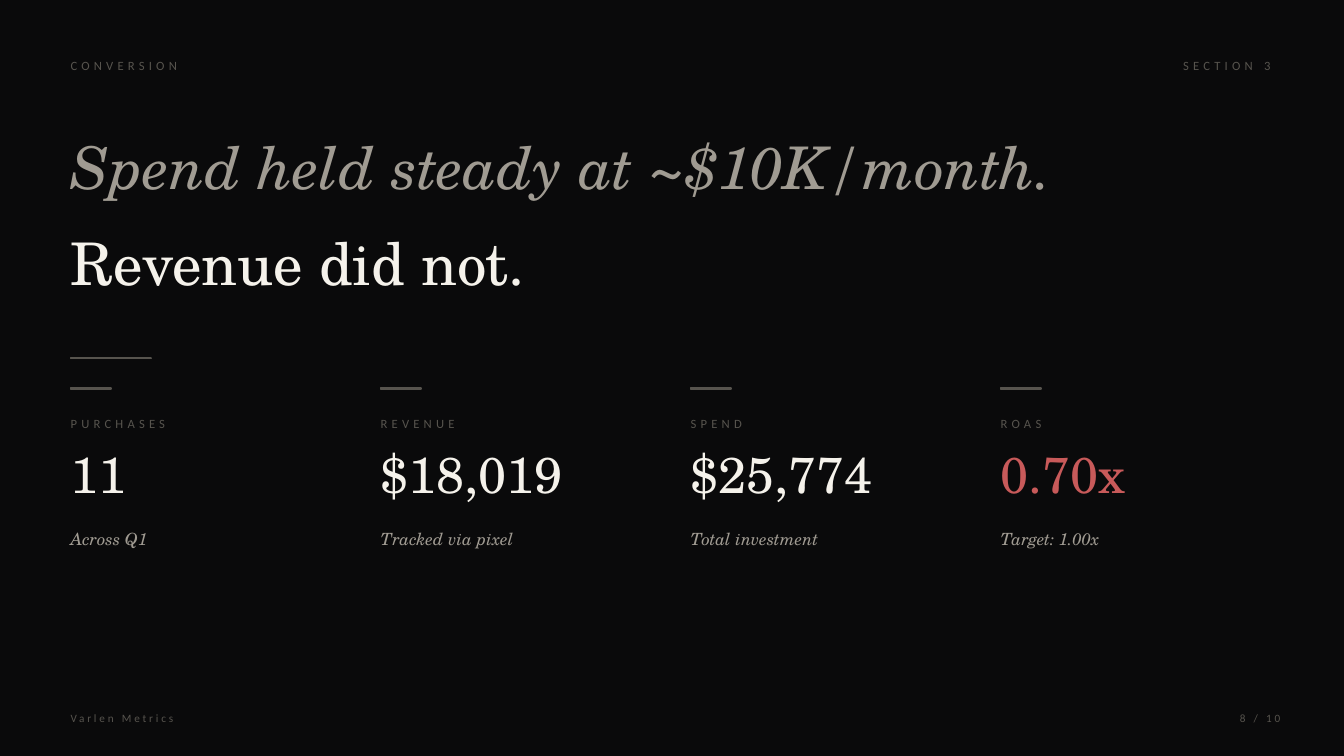
from pptx import Presentation
from pptx.dml.color import RGBColor
from pptx.enum.shapes import MSO_SHAPE
from pptx.enum.text import MSO_ANCHOR, PP_ALIGN
from pptx.util import Inches, Pt

# Content
SECTION_NAME = "CONVERSION"
SECTION_NUMBER = "SECTION 3"
HEADLINE = "Spend held steady at ~$10K/month."
PUNCHLINE = "Revenue did not."
FOOTER = "Varlen Metrics"
PAGE_NUMBER = "8 / 10"

BACKGROUND, IVORY, STONE, ASH, RED = "0A0A0B", "F5F2EB", "A09B92", "57544E", "C85A5A"
SERIF, SANS = "TeX Gyre Schola", "Calibri"

METRICS = [
    # label, value, note, value colour
    ("PURCHASES", "11", "Across Q1", IVORY),
    ("REVENUE", "$18,019", "Tracked via pixel", IVORY),
    ("SPEND", "$25,774", "Total investment", IVORY),
    ("ROAS", "0.70x", "Target: 1.00x", RED),
]

# Layout in inches
LEFT = 0.7
CONTENT_WIDTH = 11.9
GAP = 0.4
COLUMN_WIDTH = (CONTENT_WIDTH - GAP * (len(METRICS) - 1)) / len(METRICS)

deck = Presentation()
deck.slide_width, deck.slide_height = Inches(13.33), Inches(7.5)
page = deck.slides.add_slide(deck.slide_layouts[6])


def paint(color_format, value):
    color_format.rgb = RGBColor.from_string(value)


def add_text(text, left, top, width, height, *, size, color, font=SERIF,
             italic=False, spacing=0, align=PP_ALIGN.LEFT, anchor=MSO_ANCHOR.MIDDLE):
    box = page.shapes.add_textbox(Inches(left), Inches(top), Inches(width), Inches(height))
    frame = box.text_frame
    frame.word_wrap = True
    frame.vertical_anchor = anchor
    frame.margin_left = frame.margin_right = frame.margin_top = frame.margin_bottom = 0
    para = frame.paragraphs[0]
    para.alignment = align
    span = para.add_run()
    span.text = text
    span.font.name, span.font.size, span.font.italic = font, Pt(size), italic
    paint(span.font.color, color)
    if spacing:
        span.font._element.set("spc", str(spacing * 100))


def add_rule(left, top, width):
    rule = page.shapes.add_shape(MSO_SHAPE.RECTANGLE, Inches(left), Inches(top),
                                 Inches(width), Inches(0.01))
    rule.shadow.inherit = False
    rule.fill.solid()
    paint(rule.fill.fore_color, ASH)
    paint(rule.line.color, ASH)
    rule.line.width = Pt(1)


label_style = dict(size=9, color=ASH, font=SANS, spacing=3)
footer_style = dict(size=8, color=ASH, font=SANS, spacing=2)

# Background and header
page.background.fill.solid()
paint(page.background.fill.fore_color, BACKGROUND)
add_text(SECTION_NAME, LEFT, 0.5, 8, 0.3, **label_style)
add_text(SECTION_NUMBER, 9.6, 0.5, 3, 0.3, align=PP_ALIGN.RIGHT, **label_style)

# Headline
add_text(HEADLINE, LEFT, 1.2, 11.5, 0.9, size=42, color=STONE, italic=True)
add_text(PUNCHLINE, LEFT, 2.15, 11.5, 0.9, size=42, color=IVORY)
add_rule(LEFT, 3.55, 0.8)

# Metric columns
for index, (label, value, note, value_color) in enumerate(METRICS):
    left = LEFT + index * (COLUMN_WIDTH + GAP)
    add_rule(left, 3.85, 0.4)
    add_text(label, left, 4.05, COLUMN_WIDTH, 0.3, **label_style)
    add_text(value, left, 4.4, COLUMN_WIDTH, 1.1, size=36, color=value_color,
             anchor=MSO_ANCHOR.TOP)
    add_text(note, left, 5.15, COLUMN_WIDTH, 0.4, size=12, color=STONE, italic=True)

# Footer
add_text(PAGE_NUMBER, 12.1, 7, 0.6, 0.25, align=PP_ALIGN.RIGHT, **footer_style)
add_text(FOOTER, LEFT, 7, 3, 0.25, **footer_style)

deck.save("out.pptx")
